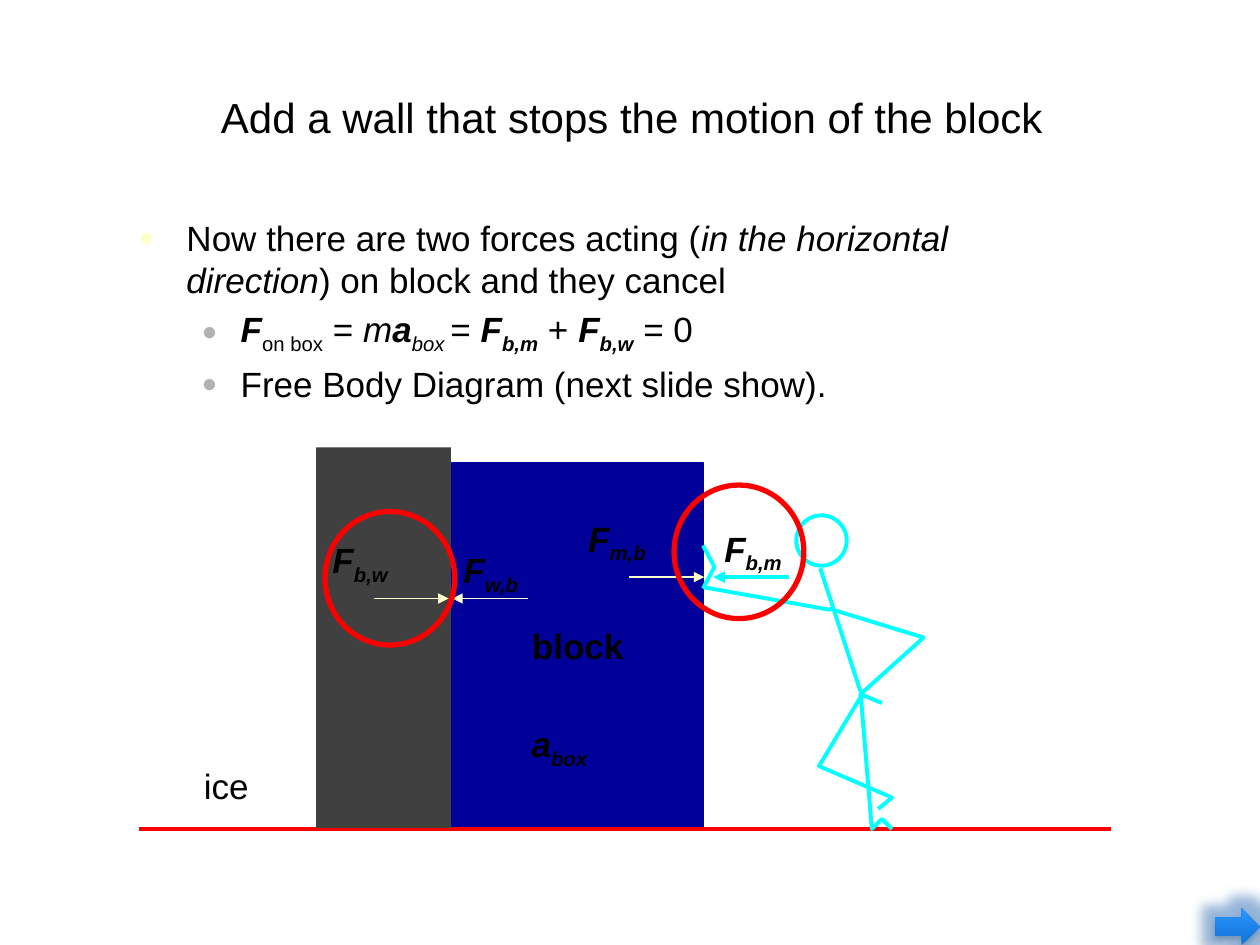
from lxml import etree
from pptx import Presentation
from pptx.dml.color import RGBColor
from pptx.enum import shapes, text
from pptx.oxml import parse_xml
from pptx.oxml.ns import nsdecls, qn
from pptx.util import Inches, Pt

# Content: text runs are (text, style), style letters b = bold, i = italic, s = subscript
TITLE = "Add a wall that stops the motion of the block"
BULLETS = [
    (0, [("Now there are two forces acting (", ""), ("in the horizontal direction", "i"),
         (") on block and they cancel", "")]),
    (1, [("F", "bi"), ("on box", "s"), (" = ", ""), ("m", "i"), ("a", "bi"), ("box ", "is"),
         ("= ", ""), ("F", "bi"), ("b,m", "bis"), (" + ", ""), ("F", "bi"), ("b,w", "bis"),
         (" = 0", "")]),
    (1, [("Free Body Diagram (next slide show).", "")]),
]
# Per level: left margin, hanging indent, bullet colour
LEVELS = [(0.38, -0.38, "FFFFCC"), (0.81, -0.31, "B2B2B2")]

BLACK, RED, CYAN, CREAM = "000000", "FC0000", "00FFFF", "FFFFCC"
BLOCK = (3.59, 3.67, 1.99, 2.9)
WALL = (2.51, 3.55, 1.07, 3.02)
HEAD = (6.32, 4.09, 0.4, 0.4)
FORCE_RINGS = [(5.35, 3.85), (2.58, 4.06)]
RING_SIZE = (1.03, 1.06)
GROUND = ((1.1, 6.58), (8.82, 6.58))
TORSO_AND_ARM = [((6.51, 4.51), (6.83, 5.49)), ((6.59, 4.84), (5.58, 4.66))]
LIMBS = [
    [(5.58, 4.67), (5.67, 4.5), (5.58, 4.33)],
    [(6.58, 4.83), (7.33, 5.06), (6.83, 5.51), (7, 5.58)],
    [(6.83, 5.5), (6.92, 6.58), (7, 6.5), (7.08, 6.58)],
    [(6.85, 5.5), (6.5, 6.08), (7.08, 6.33), (6.97, 6.42)],
]
# Force arrows: start x, tip x, y, colour, width
MAN_FORCES = [(6.26, 5.66, 4.58, CYAN, 2.25), (4.99, 5.59, 4.58, CREAM, 1)]
WALL_FORCES = [(4.19, 3.59, 4.75, CREAM, 1), (2.97, 3.56, 4.75, CREAM, 1)]
# Labels: left, top, width, symbol, subscript
BLOCK_LABELS = [(4.12, 5.69, 0.69, "a", "box"), (4.57, 4.06, 0.7, "F", "m,b"),
                (5.65, 4.14, 0.7, "F", "b,m")]
WALL_LABELS = [(2.54, 4.23, 0.68, "F", "b,w"), (3.58, 4.31, 0.68, "F", "w,b")]

prs = Presentation()
prs.slide_width, prs.slide_height = Inches(10), Inches(7.5)
slide = prs.slides.add_slide(prs.slide_layouts[1])


def rgb(hex_colour):
    return RGBColor.from_string(hex_colour)


def place(part, left, top, width, height):
    part.left, part.top = Inches(left), Inches(top)
    part.width, part.height = Inches(width), Inches(height)


def write(paragraph, runs, size=20):
    paragraph.font.name, paragraph.font.size = "Arial", Pt(size)
    paragraph.font.color.rgb = rgb(BLACK)
    for words, style in runs:
        run = paragraph.add_run()
        run.text = words
        run.font.name, run.font.size = "Arial", Pt(size)
        run.font.color.rgb = rgb(BLACK)
        run.font.bold, run.font.italic = "b" in style, "i" in style
        if "s" in style:
            run.font._element.set("baseline", "-25000")


def outline(part, colour, width):
    part.line.color.rgb, part.line.width = rgb(colour), Pt(width)


def add_shape(kind, box, fill=None, line=None, width=1):
    part = slide.shapes.add_shape(kind, *map(Inches, box))
    part.shadow.inherit = False
    if fill:
        part.fill.solid()
        part.fill.fore_color.rgb = rgb(fill)
    else:
        part.fill.background()
    if line:
        outline(part, line, width)
    else:
        part.line.fill.background()
    return part


def add_line(start, end, colour, width, arrow=False):
    line = slide.shapes.add_connector(shapes.MSO_CONNECTOR.STRAIGHT,
                                      *map(Inches, (*start, *end)))
    outline(line, colour, width)
    if arrow:
        etree.SubElement(line.line._get_or_add_ln(), qn("a:tailEnd"), type="triangle")
    etree.SubElement(line._element.spPr, qn("a:effectLst"))


def add_forces(forces):
    for start, tip, y, colour, width in forces:
        add_line((start, y), (tip, y), colour, width, arrow=True)


def add_limb(points):
    start, *rest = [tuple(map(Inches, point)) for point in points]
    builder = slide.shapes.build_freeform(*start)
    builder.add_line_segments(rest, close=False)
    limb = builder.convert_to_shape()
    limb.shadow.inherit = False
    limb.fill.background()
    outline(limb, CYAN, 2.25)


def add_label(left, top, width, runs):
    label = slide.shapes.add_textbox(*map(Inches, (left, top, width, 0.4)))
    label.text_frame.word_wrap = False
    label.text_frame.auto_size = text.MSO_AUTO_SIZE.SHAPE_TO_FIT_TEXT
    paragraph = label.text_frame.paragraphs[0]
    paragraph.line_spacing = 0.9
    write(paragraph, runs)


def add_force_labels(labels):
    for left, top, width, symbol, subscript in labels:
        add_label(left, top, width, [(symbol, "bi"), (subscript, "bis")])


# Block, behind the text
block = add_shape(shapes.MSO_SHAPE.RECTANGLE, BLOCK, "010199", "010199")
block.text_frame.word_wrap = False
block.text_frame.vertical_anchor = text.MSO_ANCHOR.MIDDLE
block_name = block.text_frame.paragraphs[0]
block_name.alignment = text.PP_ALIGN.CENTER
write(block_name, [("block", "b")])
slide.shapes._spTree.insert(2, block._element)

# Title
title = slide.shapes.title
place(title, 0.54, 0.56, 8.95, 0.73)
title.text_frame.vertical_anchor = text.MSO_ANCHOR.MIDDLE
title.text_frame.paragraphs[0].alignment = text.PP_ALIGN.CENTER
write(title.text_frame.paragraphs[0], [(TITLE, "")], 24)

# Bulleted list
body = slide.placeholders[1]
place(body, 1, 1.67, 7.83, 1.71)
body.text_frame.auto_size = text.MSO_AUTO_SIZE.NONE
for number, (level, runs) in enumerate(BULLETS):
    item = body.text_frame.add_paragraph() if number else body.text_frame.paragraphs[0]
    item.level = level
    write(item, runs)
    margin, indent, colour = LEVELS[level]
    props = item._p.get_or_add_pPr()
    props.set("marL", str(Inches(margin)))
    props.set("indent", str(Inches(indent)))
    bullet = [f'<a:buClr {nsdecls("a")}><a:srgbClr val="{colour}"/></a:buClr>',
              f'<a:buSzPct {nsdecls("a")} val="75000"/>',
              f'<a:buFont {nsdecls("a")} typeface="Arial"/>',
              f'<a:buChar {nsdecls("a")} char="●"/>']
    for position, xml in enumerate(bullet):
        props.insert(position, parse_xml(xml))

# Ground, pushing figure and its forces
add_line(*GROUND, RED, 2)
add_shape(shapes.MSO_SHAPE.OVAL, HEAD, line=CYAN, width=2.25)
for start, end in TORSO_AND_ARM:
    add_line(start, end, CYAN, 2.25)
for limb_points in LIMBS:
    add_limb(limb_points)
add_forces(MAN_FORCES)
add_force_labels(BLOCK_LABELS)
add_label(1.52, 6.06, 0.56, [("ice", "")])

# Wall, its forces and the rings around the forces on the block
add_shape(shapes.MSO_SHAPE.RECTANGLE, WALL, "404040")
add_forces(WALL_FORCES)
add_force_labels(WALL_LABELS)
for corner in FORCE_RINGS:
    add_shape(shapes.MSO_SHAPE.OVAL, corner + RING_SIZE, line=RED, width=3)

# Next-slide arrow with glow and soft shadow
next_arrow = add_shape(shapes.MSO_SHAPE.RIGHT_ARROW, (9.64, 7.21, 0.36, 0.29))
next_arrow.fill.gradient()
next_arrow.fill.gradient_angle = 90
for stop, colour in zip(next_arrow.fill.gradient_stops, ("0F72D5", "2B95FF")):
    stop.color.rgb = rgb(colour)
effects = next_arrow._element.spPr.find(qn("a:effectLst"))
effects.append(parse_xml(
    f'<a:glow {nsdecls("a")} rad="{Pt(14)}"><a:srgbClr val="2B78D0">'
    '<a:alpha val="40000"/></a:srgbClr></a:glow>'))
effects.append(parse_xml(
    f'<a:outerShdw {nsdecls("a")} blurRad="{Pt(3.1)}" dist="{Pt(1.8)}" dir="5400000">'
    '<a:srgbClr val="000000"><a:alpha val="35000"/></a:srgbClr></a:outerShdw>'))

prs.save("out.pptx")
